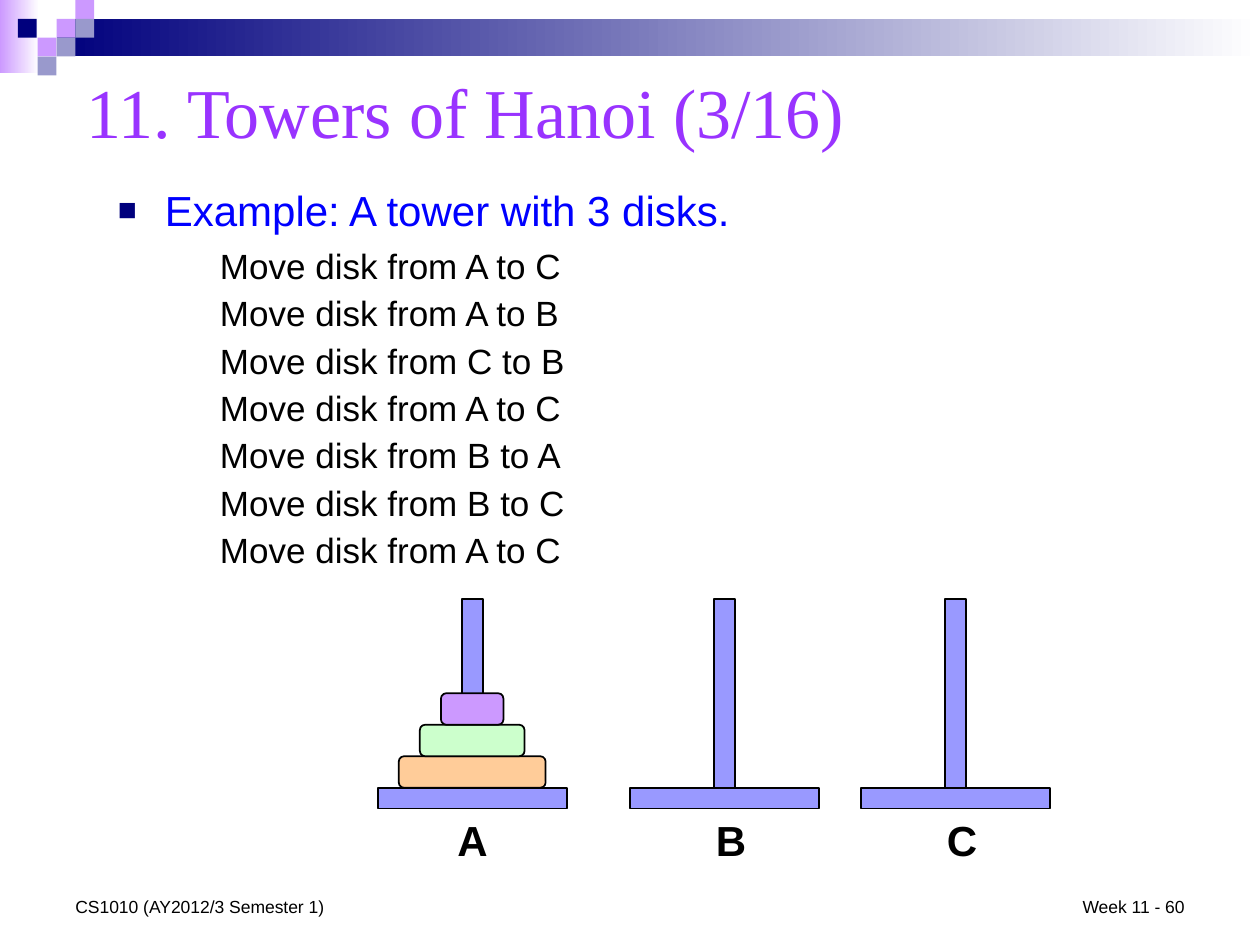
import lxml.etree
import pptx
import pptx.dml.color
import pptx.enum.shapes
import pptx.enum.text
import pptx.oxml.ns
import pptx.util

Cm = pptx.util.Cm
Pt = pptx.util.Pt
SHAPE = pptx.enum.shapes.MSO_SHAPE
ALIGN = pptx.enum.text.PP_ALIGN
ANCHOR = pptx.enum.text.MSO_ANCHOR

NAVY, LILAC, GREY_BLUE, WHITE, BLACK = "00007D", "CC99FF", "9999CC", "FFFFFF", "000000"
TOWER_FILL = "9999FF"
TITLE = "11. Towers of Hanoi (3/16)"
EXAMPLE = "Example: A tower with 3 disks."
MOVES = ["AC", "AB", "CB", "AC", "BA", "BC", "AC"]
# Disk fills from the bottom of the tower to the top
DISKS = ["FFCC99", "CCFFCC", LILAC]


def rgb(value):
    return pptx.dml.color.RGBColor.from_string(value)


def place(shape, box):
    shape.left, shape.top, shape.width, shape.height = (Cm(length) for length in box)


def add_block(shapes, kind, box, fill, outline=None):
    block = shapes.add_shape(kind, *(Cm(length) for length in box))
    block.shadow.inherit = False
    block.fill.solid()
    block.fill.fore_color.rgb = rgb(fill)
    if outline:
        block.line.color.rgb = rgb(outline)
        block.line.width = Pt(1)
    else:
        block.line.fill.background()
    return block


def add_fade(shapes, box, color):
    """Add a bar that fades from the colour on the left to white."""
    bar = add_block(shapes, SHAPE.RECTANGLE, box, color)
    bar.fill.gradient()
    bar.fill.gradient_angle = 0
    for stop, stop_color, position in zip(bar.fill.gradient_stops, (color, WHITE), (0, 1)):
        stop.color.rgb = rgb(stop_color)
        stop.position = position


def format_text(paragraph, size, color, font="Arial", bold=False, align=ALIGN.LEFT):
    paragraph.alignment = align
    for run in paragraph.runs:
        run.font.name = font
        run.font.size = Pt(size)
        run.font.bold = bold
        run.font.color.rgb = rgb(color)


def add_label(shapes, box, text, size, anchor=ANCHOR.TOP, **style):
    label = shapes.add_textbox(*(Cm(length) for length in box))
    frame = label.text_frame
    frame.word_wrap = True
    frame.vertical_anchor = anchor
    frame.text = text
    format_text(frame.paragraphs[0], size, BLACK, **style)
    return frame.paragraphs[0]


def set_bullet(paragraph, margin, indent, char=None):
    props = paragraph._p.get_or_add_pPr()
    props.set("marL", str(Cm(margin)))
    props.set("indent", str(Cm(indent)))

    def add(parent, tag, **attributes):
        return lxml.etree.SubElement(parent, pptx.oxml.ns.qn(tag), attributes)

    if char:
        add(add(props, "a:buClr"), "a:srgbClr", val=NAVY)
        add(props, "a:buSzPct", val="75000")
        add(props, "a:buFont", typeface="Arial")
        add(props, "a:buChar", char=char)
    else:
        add(props, "a:buNone")


def add_banner(slide, left, top):
    """Add the fading bars and the mosaic of small squares."""
    tile = 0.38
    add_fade(slide.shapes, (left, top, 0.79, 1.47), LILAC)
    add_fade(slide.shapes, (left + 3 * tile, top + tile, 25.4 - 3 * tile, 0.76), NAVY)
    mosaic = [(3, 1, LILAC), (4, 0, LILAC), (4, 1, GREY_BLUE), (2, 2, LILAC),
              (0.95, 1, NAVY), (3, 2, GREY_BLUE), (2, 3, GREY_BLUE)]
    for column, row, color in mosaic:
        box = (left + column * tile, top + row * tile, tile, tile)
        add_block(slide.shapes, SHAPE.RECTANGLE, box, color)


def fill_title(slide, box):
    title = slide.shapes.title
    place(title, box)
    title.text_frame.text = TITLE
    title.text_frame.vertical_anchor = ANCHOR.MIDDLE
    format_text(title.text_frame.paragraphs[0], 40, "9933FF", font="Times New Roman")


def fill_moves(slide, box):
    body = slide.placeholders[1]
    place(body, box)
    frame = body.text_frame
    frame.auto_size = pptx.enum.text.MSO_AUTO_SIZE.NONE
    frame.text = "\n".join([EXAMPLE] + [f"Move disk from {a} to {b}" for a, b in MOVES])
    example, *moves = frame.paragraphs
    format_text(example, 24, "0000FF", align=ALIGN.JUSTIFY)
    example.space_before = Pt(2.3)
    example.space_after = Pt(2)
    set_bullet(example, 0.95, -0.95, "■")
    for move in moves:
        move.level = 1
        format_text(move, 20, BLACK, align=ALIGN.JUSTIFY)
        move.space_before = Pt(3.1)
        move.space_after = Pt(0)
        set_bullet(move, 2.06, 0)


def add_tower(shapes, left, top, name, label_left, label_width, align):
    base_width, base_height, peg_height = 3.81, 0.42, 3.81
    base_box = (left, top + peg_height, base_width, base_height)
    peg_box = (left + (base_width - base_height) / 2, top, base_height, peg_height)
    for box in (base_box, peg_box):
        add_block(shapes, SHAPE.RECTANGLE, box, TOWER_FILL, BLACK)
    label_box = (left + label_left, top + peg_height + base_height, label_width, 1.27)
    label = add_label(shapes, label_box, name, 24, bold=True, align=align)
    label.space_before = Pt(2.3)


def add_disks(shapes, center, bottom):
    height = 0.635
    for level, color in enumerate(DISKS):
        width = 2.96 - level * 0.85
        box = (center - width / 2, bottom - (level + 1) * height, width, height)
        disk = add_block(shapes, SHAPE.ROUNDED_RECTANGLE, box, color, BLACK)
        disk.adjustments[0] = 0.167


def add_towers(slide, left, top):
    shapes = slide.shapes.add_group_shape().shapes
    add_tower(shapes, left, top, "A", 1.27, 1.27, ALIGN.CENTER)
    add_tower(shapes, left + 5.08, top, "B", 1.48, 1.12, ALIGN.LEFT)
    add_tower(shapes, left + 9.74, top, "C", 1.48, 1.07, ALIGN.LEFT)
    add_disks(shapes, left + 1.9, top + 3.81)


def add_footer(slide, top):
    add_label(slide.shapes, (1.27, top, 8.05, 1.27), "CS1010 (AY2012/3 Semester 1)", 10,
              anchor=ANCHOR.BOTTOM)
    add_label(slide.shapes, (18.21, top, 5.92, 1.27), "Week 11 - 60", 10,
              anchor=ANCHOR.BOTTOM, align=ALIGN.RIGHT)


def main():
    deck = pptx.Presentation()
    deck.slide_width, deck.slide_height = Cm(25.4), Cm(19.05)
    slide = deck.slides.add_slide(deck.slide_layouts[1])
    add_banner(slide, 0, 0)
    fill_title(slide, (1.48, 1.27, 22.65, 1.91))
    fill_moves(slide, (2.12, 3.6, 22.23, 13.97))
    add_towers(slide, 7.62, 12.07)
    add_footer(slide, 17.35)
    deck.save("out.pptx")


if __name__ == "__main__":
    main()
